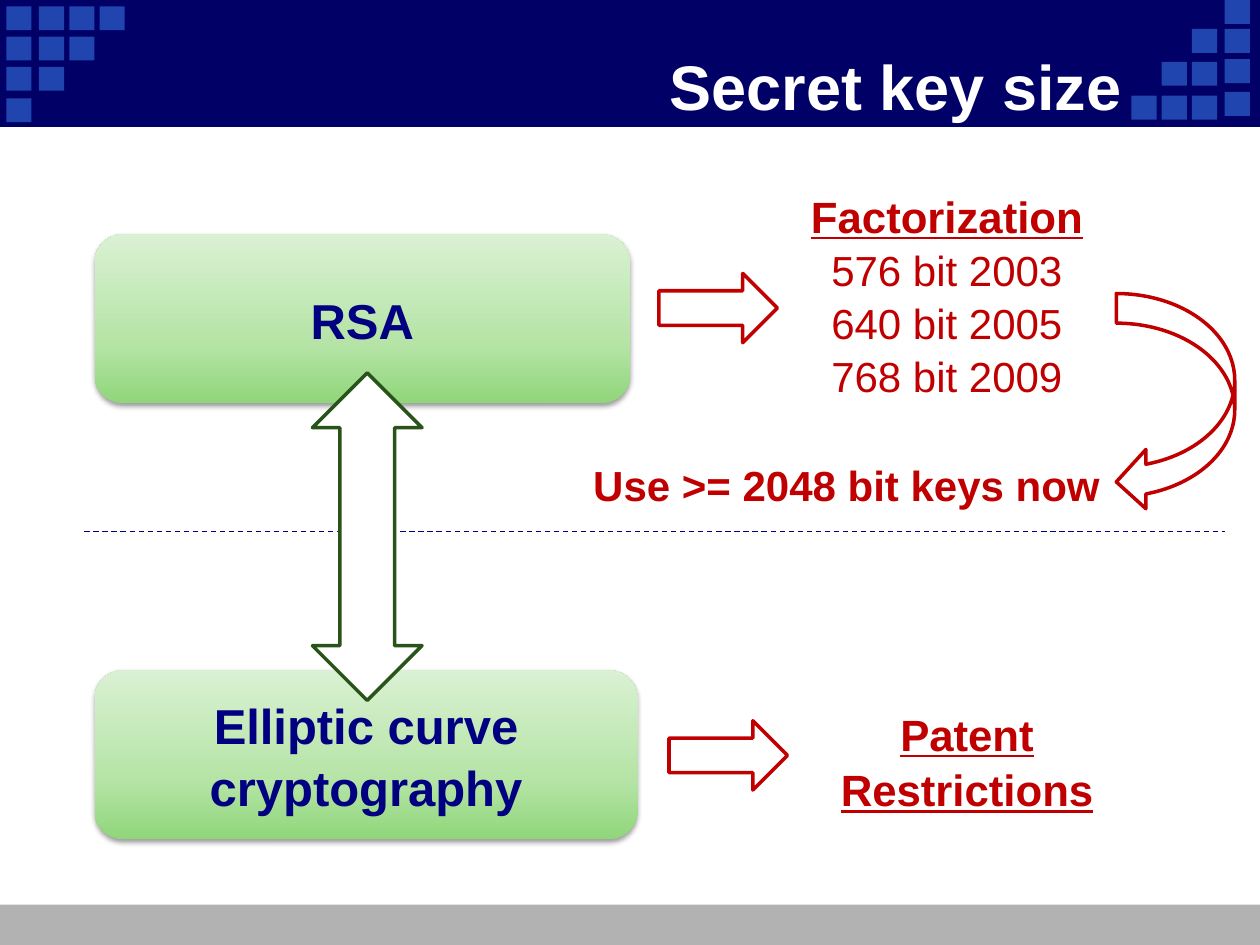
from copy import deepcopy

from lxml.etree import SubElement
from pptx import Presentation
from pptx.dml.color import RGBColor
from pptx.enum.dml import MSO_LINE
from pptx.enum.shapes import MSO_CONNECTOR, MSO_SHAPE
from pptx.enum.text import MSO_ANCHOR, PP_ALIGN
from pptx.oxml.ns import qn
from pptx.util import Inches, Pt

WHITE = RGBColor(0xFF, 0xFF, 0xFF)
GRAY = RGBColor(0xB2, 0xB2, 0xB2)
BANNER = RGBColor(0x00, 0x00, 0x66)
SQUARE = RGBColor(0x20, 0x45, 0xAE)
NAVY = RGBColor(0x00, 0x00, 0x80)
RED = RGBColor(0xC0, 0x00, 0x00)
DARK_GREEN = RGBColor(0x28, 0x54, 0x1A)
GREEN_STOPS = [
    (0, RGBColor(0x90, 0xD6, 0x7A)),
    (0.35, RGBColor(0xB5, 0xE4, 0xA6)),
    (1, RGBColor(0xDA, 0xF1, 0xD3)),
]

# Each column of corner squares: left edge, top edges
SQUARE_SIZE = (0.2, 0.19)
LEFT_ROWS = [0.05, 0.29, 0.53, 0.78]
RIGHT_ROWS = [0.76, 0.49, 0.23]
SQUARE_COLUMNS = [
    (0.05, LEFT_ROWS),
    (0.31, LEFT_ROWS[:3]),
    (0.55, LEFT_ROWS[:2]),
    (0.79, LEFT_ROWS[:1]),
    (9.72, [0.73, 0.47, 0.23, 0]),
    (9.46, RIGHT_ROWS),
    (9.22, RIGHT_ROWS[:2]),
    (8.98, RIGHT_ROWS[:1]),
]

# Green boxes: position, wording
CRYPTO_BOXES = [
    ((0.75, 5.32, 4.31, 1.34), "Elliptic curve cryptography"),
    ((0.75, 1.86, 4.25, 1.34), "RSA"),
]

# Outlined arrows: preset, position, fill, line colour
ARROWS = [
    (MSO_SHAPE.RIGHT_ARROW, (5.23, 2.17, 0.94, 0.55), None, RED),
    (MSO_SHAPE.RIGHT_ARROW, (5.31, 5.72, 0.94, 0.55), None, RED),
    (MSO_SHAPE.CURVED_LEFT_ARROW, (8.86, 2.33, 0.94, 1.73), None, RED),
    (MSO_SHAPE.UP_DOWN_ARROW, (2.48, 2.96, 0.87, 2.6), WHITE, DARK_GREEN),
]

# Text styles: size, colour, bold, underline
TITLE = (36, WHITE, True, False)
BOX_LABEL = (28, NAVY, True, False)
HEADING = (25, RED, True, True)
DETAIL = (24, RED, False, False)
ADVICE = (24, RED, True, False)

# Texts: position, alignment, lines of (wording, style)
TEXTS = [
    ((0.92, 0.35, 8.08, 0.62), PP_ALIGN.RIGHT, [("Secret key size", TITLE)]),
    ((6.1, 1.47, 2.83, 1.73), PP_ALIGN.CENTER, [
        ("Factorization", HEADING),
        ("576 bit 2003", DETAIL),
        ("640 bit 2005", DETAIL),
        ("768 bit 2009", DETAIL),
    ]),
    ((4.61, 3.44, 4.25, 0.79), PP_ALIGN.LEFT, [("Use >= 2048 bit keys now", ADVICE)]),
    ((6.26, 5.17, 2.83, 1.73), PP_ALIGN.CENTER, [("Patent Restrictions", HEADING)]),
]


def add_preset(slide, preset, position, fill=None, line=None, width=2):
    shape = slide.shapes.add_shape(preset, *map(Inches, position))
    shape.shadow.inherit = False
    if fill is None:
        shape.fill.background()
    else:
        shape.fill.solid()
        shape.fill.fore_color.rgb = fill
    if line is None:
        shape.line.fill.background()
    else:
        shape.line.color.rgb = line
        shape.line.width = Pt(width)
    return shape


def write_lines(text_frame, alignment, lines):
    text_frame.word_wrap = True
    text_frame.vertical_anchor = MSO_ANCHOR.MIDDLE
    for index, (wording, (size, color, bold, underline)) in enumerate(lines):
        paragraph = text_frame.add_paragraph() if index else text_frame.paragraphs[0]
        paragraph.alignment = alignment
        paragraph.line_spacing = 1.05
        run = paragraph.add_run()
        run.text = wording
        run.font.name = "Arial"
        run.font.size = Pt(size)
        run.font.bold = bold
        run.font.underline = underline
        run.font.color.rgb = color


def apply_green_gradient(shape):
    """Fill from dark at the bottom to light at the top."""
    fill = shape.fill
    fill.gradient()
    fill.gradient_angle = 90
    stop_list = shape._element.spPr.find(qn("a:gradFill")).find(qn("a:gsLst"))
    stop_list.insert(1, deepcopy(stop_list[0]))
    for stop, (position, color) in zip(fill.gradient_stops, GREEN_STOPS):
        stop.position = position
        stop.color.rgb = color


def apply_soft_shadow(shape):
    effects = shape._element.spPr.find(qn("a:effectLst"))
    shadow = SubElement(effects, qn("a:outerShdw"), blurRad=str(Pt(3.1)),
                        dist=str(Pt(1.6)), dir="5400000", rotWithShape="0")
    color = SubElement(shadow, qn("a:srgbClr"), val="000000")
    SubElement(color, qn("a:alpha"), val="38000")


def add_divider(slide):
    divider = slide.shapes.add_connector(
        MSO_CONNECTOR.STRAIGHT, *map(Inches, (0.67, 4.22, 9.72, 4.22)))
    divider.line.color.rgb = NAVY
    divider.line.width = Pt(0.75)
    divider.line.dash_style = MSO_LINE.DASH
    SubElement(divider._element.spPr, qn("a:effectLst"))


def main():
    presentation = Presentation()
    presentation.slide_width = Inches(10)
    presentation.slide_height = Inches(7.5)
    slide = presentation.slides.add_slide(presentation.slide_layouts[6])

    add_preset(slide, MSO_SHAPE.RECTANGLE, (0, 7.18, 10, 0.32), GRAY)
    add_preset(slide, MSO_SHAPE.RECTANGLE, (0, 0, 10, 1), BANNER, BANNER, 0.75)
    for left, tops in SQUARE_COLUMNS:
        for top in tops:
            add_preset(slide, MSO_SHAPE.RECTANGLE, (left, top, *SQUARE_SIZE), SQUARE)

    add_divider(slide)
    for position, label in CRYPTO_BOXES:
        box = add_preset(slide, MSO_SHAPE.ROUNDED_RECTANGLE, position)
        apply_green_gradient(box)
        apply_soft_shadow(box)
        write_lines(box.text_frame, PP_ALIGN.CENTER, [(label, BOX_LABEL)])
    for preset, position, fill, line in ARROWS:
        add_preset(slide, preset, position, fill, line)
    for position, alignment, lines in TEXTS:
        text_box = slide.shapes.add_textbox(*map(Inches, position))
        write_lines(text_box.text_frame, alignment, lines)

    presentation.save("out.pptx")


if __name__ == "__main__":
    main()
